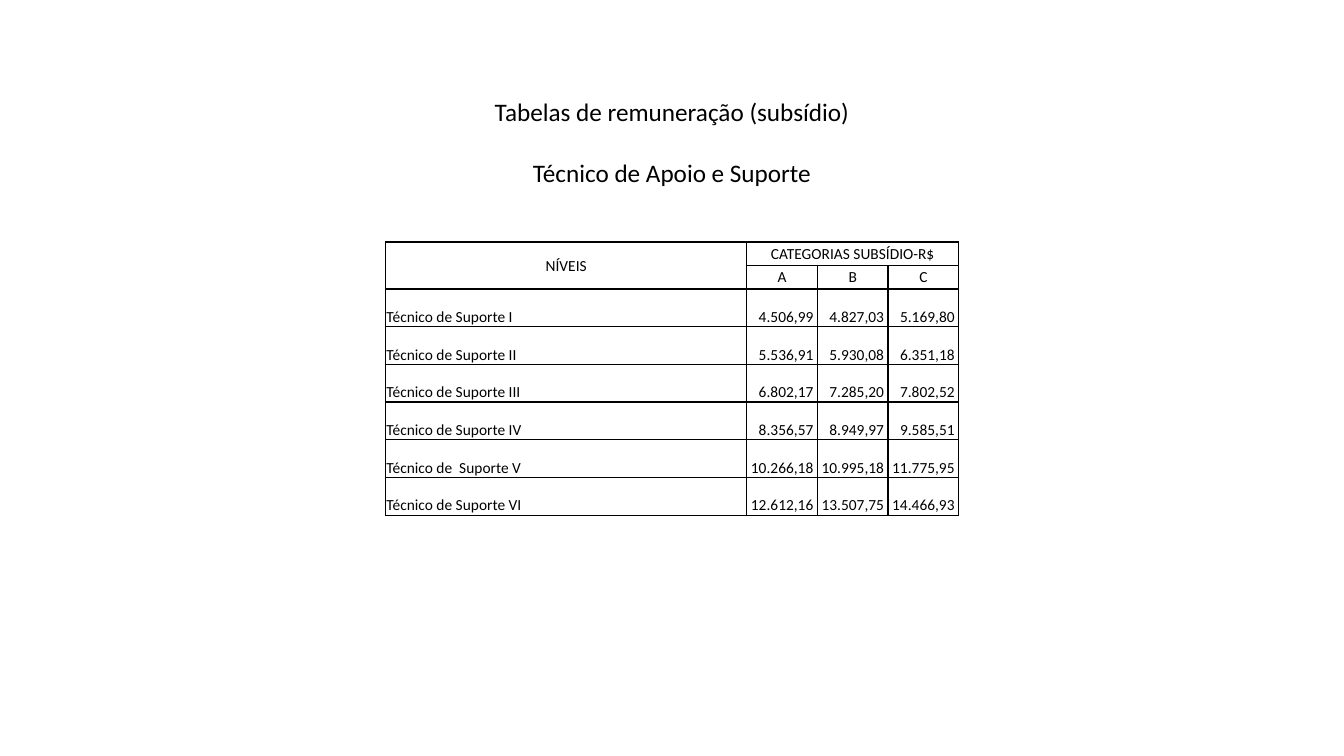
"""Build a slide with the pay table of the support technicians."""
from dataclasses import dataclass

from lxml.etree import SubElement
from pptx import Presentation
from pptx.dml.color import RGBColor
from pptx.enum.text import MSO_ANCHOR as Anchor, PP_ALIGN as Align
from pptx.oxml.ns import qn
from pptx.util import Cm, Pt

HEADINGS = ["Tabelas de remuneração (subsídio)", "Técnico de Apoio e Suporte"]
LEVEL_TITLE = "NÍVEIS"
CATEGORY_TITLE = "CATEGORIAS SUBSÍDIO-R$"
CATEGORIES = ["A", "B", "C"]
PAY = [
    ("Técnico de Suporte I", "4.506,99", "4.827,03", "5.169,80"),
    ("Técnico de Suporte II", "5.536,91", "5.930,08", "6.351,18"),
    ("Técnico de Suporte III", "6.802,17", "7.285,20", "7.802,52"),
    ("Técnico de Suporte IV", "8.356,57", "8.949,97", "9.585,51"),
    ("Técnico de  Suporte V", "10.266,18", "10.995,18", "11.775,95"),
    ("Técnico de Suporte VI", "12.612,16", "13.507,75", "14.466,93"),
]


@dataclass(frozen=True)
class Theme:
    font: str = "Calibri"
    ink: str = "000000"
    heading_size: int = 18
    table_size: int = 11
    border: int = 1


THEME = Theme()
HEADER_ROWS = 2
HEADER_HEIGHT, PAY_HEIGHT = Cm(0.59), Cm(0.95)
LEVEL_WIDTH, CATEGORY_WIDTH = Cm(9.1), Cm(1.78)
EDGE, PAY_EDGE = Cm(0.02), Cm(0.1)


def write(paragraph, text, size=THEME.table_size, align=Align.CENTER, before=0):
    paragraph.alignment = align
    if before:
        paragraph.space_before = Pt(before)
    run = paragraph.add_run()
    run.text = text
    run.font.name = THEME.font
    run.font.size = Pt(size)
    run.font.color.rgb = RGBColor.from_string(THEME.ink)


def frame_cell(cell):
    cell.fill.background()
    cell.margin_left = cell.margin_right = cell.margin_top = EDGE
    cell.margin_bottom = 0
    properties = cell._tc.get_or_add_tcPr()
    for position, side in enumerate(("a:lnL", "a:lnR", "a:lnT", "a:lnB")):
        border = SubElement(properties, qn(side), w=str(Pt(THEME.border)))
        ink = SubElement(border, qn("a:solidFill"))
        SubElement(ink, qn("a:srgbClr"), val=THEME.ink)
        properties.insert(position, border)


def add_headings(slide):
    frame = slide.shapes.add_textbox(Cm(5.05), Cm(2.31), Cm(23.77), Cm(2.57)).text_frame
    frame.word_wrap = True
    for index, heading in enumerate(HEADINGS):
        paragraph = frame.add_paragraph() if index else frame.paragraphs[0]
        write(paragraph, heading, size=THEME.heading_size, before=22 * index)


def add_pay_table(slide):
    heights = [HEADER_HEIGHT] * HEADER_ROWS + [PAY_HEIGHT] * len(PAY)
    widths = [LEVEL_WIDTH] + [CATEGORY_WIDTH] * len(CATEGORIES)
    table = slide.shapes.add_table(
        len(heights), len(widths), Cm(9.72), Cm(6.1), sum(widths), sum(heights)
    ).table
    table.first_row = table.horz_banding = False
    for row, height in zip(table.rows, heights):
        row.height = height
    for column, width in zip(table.columns, widths):
        column.width = width
    for cell in table.iter_cells():
        frame_cell(cell)

    table.cell(0, 0).merge(table.cell(HEADER_ROWS - 1, 0))
    table.cell(0, 1).merge(table.cell(0, len(CATEGORIES)))
    headers = {(0, 0): LEVEL_TITLE, (0, 1): CATEGORY_TITLE}
    headers |= {(1, column): name for column, name in enumerate(CATEGORIES, 1)}
    for place, header in headers.items():
        cell = table.cell(*place)
        cell.vertical_anchor = Anchor.MIDDLE
        write(cell.text_frame.paragraphs[0], header)

    for row, values in enumerate(PAY, HEADER_ROWS):
        for column, value in enumerate(values):
            cell = table.cell(row, column)
            cell.vertical_anchor = Anchor.BOTTOM
            if column:
                cell.margin_right = PAY_EDGE
            align = Align.RIGHT if column else Align.LEFT
            write(cell.text_frame.paragraphs[0], value, align=align)


def main():
    deck = Presentation()
    deck.slide_width, deck.slide_height = Cm(33.87), Cm(19.05)
    slide = deck.slides.add_slide(deck.slide_layouts[6])
    add_headings(slide)
    add_pay_table(slide)
    deck.save("out.pptx")


if __name__ == "__main__":
    main()
